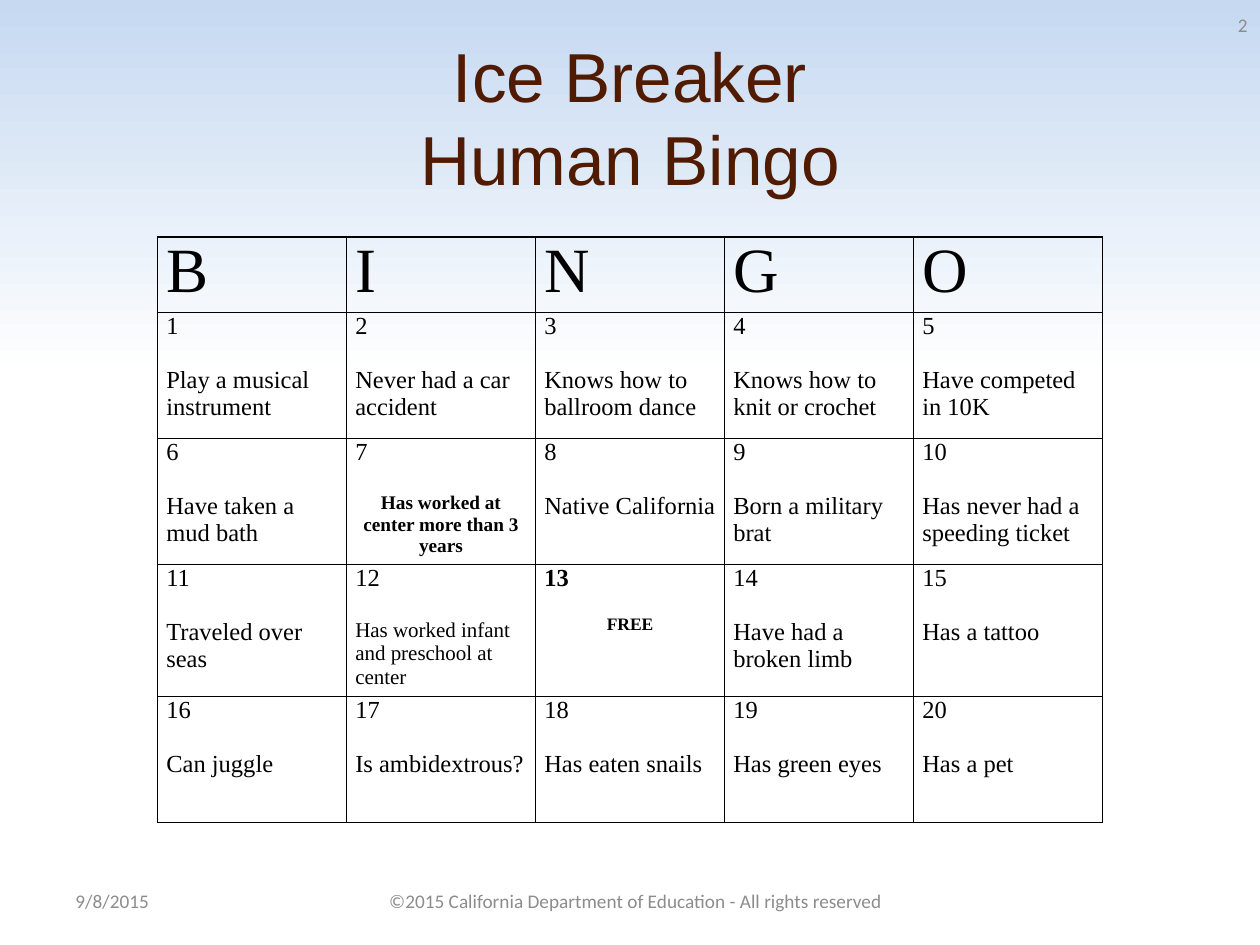
from pptx import Presentation
from pptx.dml.color import RGBColor
from pptx.enum.text import MSO_ANCHOR, MSO_AUTO_SIZE, PP_ALIGN
from pptx.oxml import parse_xml
from pptx.oxml.ns import nsdecls
from pptx.util import Inches, Pt

LEFT, MID, RIGHT = PP_ALIGN.LEFT, PP_ALIGN.CENTER, PP_ALIGN.RIGHT
CENTER = MSO_ANCHOR.MIDDLE
FIXED = MSO_AUTO_SIZE.NONE
BROWN = RGBColor(0x50, 0x1B, 0x00)
GRAY = RGBColor(0x8C, 0x8C, 0x8C)
BLACK = RGBColor(0, 0, 0)
SKY = RGBColor(0xC6, 0xD9, 0xF1)
WHITE = RGBColor(0xFF, 0xFF, 0xFF)
SERIF = "Times New Roman"

TITLE = "Ice Breaker\vHuman Bingo"
WORD = "BINGO"
TASKS = [
    "Play a musical instrument", "Never had a car accident",
    "Knows how to ballroom dance", "Knows how to knit or crochet",
    "Have competed in 10K",
    "Have taken a mud bath", "Has worked at center more than 3 years",
    "Native California", "Born a military brat",
    "Has never had a speeding ticket",
    "Traveled over seas", "Has worked infant and preschool at center",
    "FREE", "Have had a broken limb", "Has a tattoo",
    "Can juggle", "Is ambidextrous?", "Has eaten snails",
    "Has green eyes", "Has a pet",
]
# number: size, bold, align, gap
PLAIN = (14, False, LEFT, 15.5)
ODD = {7: (11, True, MID, 15.5), 12: (12, False, LEFT, 15.5),
       13: (10, True, MID, 13.3)}
FREE = 13
NOTES = [
    ("9/8/2015", 0.5, 6.95, 2.33, LEFT),
    ("©2015 California Department of Education - All rights reserved",
     1.92, 6.95, 6.25, MID),
    ("2", 7.67, 0, 2.33, RIGHT),
]
COLS, ROWS = len(WORD), len(TASKS) // len(WORD)
SIDE, HEAD = 1.5, 0.55


def style(para, size, face, color, bold=False, align=LEFT):
    para.alignment = align
    font = para.font
    font.size, font.name, font.bold = Pt(size), face, bold
    font.color.rgb = color


def frame(cell):
    cell.margin_left = cell.margin_right = Inches(0.07)
    cell.margin_top = cell.margin_bottom = 0
    cell.fill.background()
    props = cell._tc.get_or_add_tcPr()
    for spot, edge in enumerate("LRTB"):
        props.insert(spot, parse_xml(
            f'<a:ln{edge} {nsdecls("a")} w="12700"><a:solidFill>'
            f'<a:srgbClr val="{BLACK}"/></a:solidFill></a:ln{edge}>'))


def add_board(slide):
    board = slide.shapes.add_table(
        ROWS + 1, COLS, Inches(1.25), Inches(1.88),
        Inches(COLS * SIDE), Inches(HEAD + ROWS)).table
    board.first_row = board.horz_banding = False
    board.rows[0].height = Inches(HEAD)
    for row in list(board.rows)[1:]:
        row.height = Inches(1)
    for col, char in enumerate(WORD):
        cell = board.cell(0, col)
        frame(cell)
        cell.text = char
        style(cell.text_frame.paragraphs[0], 36, SERIF, BLACK)
    for num, task in enumerate(TASKS, 1):
        row, col = divmod(num - 1, COLS)
        cell = board.cell(row + 1, col)
        frame(cell)
        cell.text = f"{num}\n{task}"
        top, body = cell.text_frame.paragraphs
        size, bold, align, gap = ODD.get(num, PLAIN)
        style(top, 14, SERIF, BLACK, num == FREE)
        style(body, size, SERIF, BLACK, bold, align)
        body.space_before = Pt(gap)


def main():
    """Build the human bingo slide."""
    deck = Presentation()
    deck.slide_width, deck.slide_height = Inches(10), Inches(7.5)
    slide = deck.slides.add_slide(deck.slide_layouts[5])
    fill = slide.background.fill
    fill.gradient()
    fill.gradient_angle = 270
    for stop, color, spot in zip(fill.gradient_stops, (SKY, WHITE), (0, 0.4)):
        stop.color.rgb, stop.position = color, spot

    title = slide.shapes.title
    title.left, title.top = Inches(0.5), Inches(0.3)
    title.width, title.height = Inches(9), Inches(1.25)
    title.text = TITLE
    title.text_frame.auto_size = FIXED
    title.text_frame.vertical_anchor = CENTER
    para = title.text_frame.paragraphs[0]
    style(para, 39.6, "Arial", BROWN, align=MID)
    para.line_spacing = Pt(47.5)

    for text, left, top, width, align in NOTES:
        box = slide.shapes.add_textbox(
            Inches(left), Inches(top), Inches(width), Inches(0.4)).text_frame
        box.word_wrap, box.vertical_anchor = True, CENTER
        box.text = text
        style(box.paragraphs[0], 11, "Calibri", GRAY, align=align)

    add_board(slide)
    deck.save("out.pptx")


if __name__ == "__main__":
    main()
